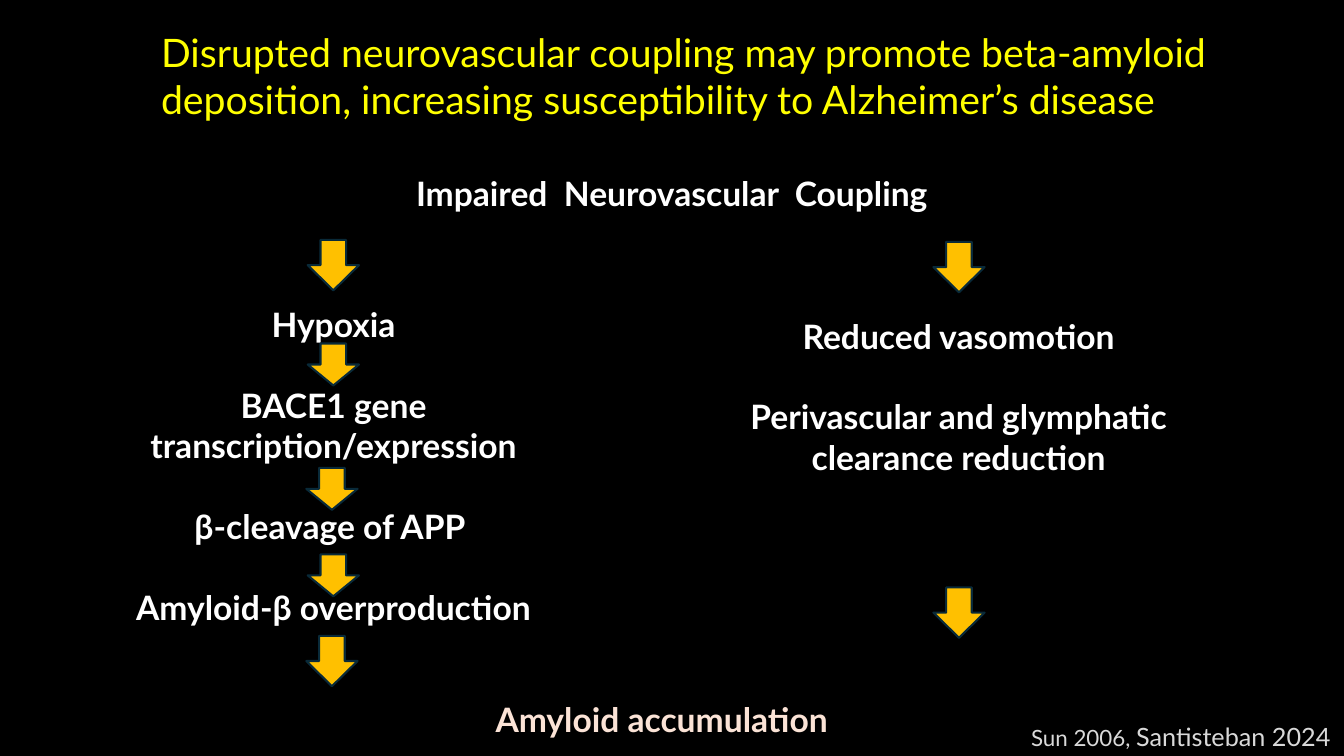
from pptx import Presentation
from pptx.dml.color import RGBColor
from pptx.enum.shapes import MSO_SHAPE
from pptx.enum.text import MSO_AUTO_SIZE, PP_ALIGN
from pptx.util import Pt

COLORS = {
    "background": "000000",
    "title": "FFFF00",
    "step": "FFFFFF",
    "outcome": "FBE3D6",
    "citation": "D9D9D9",
    "arrow": "FFC000",
    "arrow edge": "092A39",
}
FONT = "Lato"
STEP_SIZE = 24
STEP_GAP = 28.8

TITLE = [[("Disrupted neurovascular coupling may promote beta-amyloid deposition, "
           "increasing susceptibility to Alzheimer’s disease", 28)]]
CAUSE = ["Impaired  Neurovascular  Coupling"]
PRODUCTION = ["Hypoxia", "BACE1 gene transcription/expression",
              "β-cleavage of APP ", "Amyloid-β overproduction"]
CLEARANCE = ["Reduced vasomotion", "Perivascular and glymphatic clearance reduction"]
OUTCOME = ["Amyloid accumulation"]
CITATION = [[("Sun 2006, ", 16), ("Santisteban 2024", 18)]]

PLAIN_TEXTS = [
    (TITLE, "title", (108, 16.4, 889, 75)),
    (CITATION, "citation", (729.4, 512, 263, 48)),
]
STEP_TEXTS = [
    (PRODUCTION, "step", (82, 213.8, 312.5, 240)),
    (CLEARANCE, "step", (528.5, 221.8, 312.5, 152.6)),
    (CAUSE, "step", (230.4, 120.2, 499, 36)),
    (OUTCOME, "outcome", (129.6, 495.4, 686, 65.5)),
]

ARROW_WIDTH = 36.6
LONG, SHORT = 36, 30
ARROWS = [
    (219.8, 171.4, LONG),
    (219.8, 245.4, SHORT),
    (218.8, 334.2, SHORT),
    (219.8, 396, SHORT),
    (218.8, 454.2, LONG),
    (666.7, 172.8, LONG),
    (666.7, 419.6, LONG),
]


def rgb(role):
    """Return the colour of a role."""
    return RGBColor.from_string(COLORS[role])


def add_text(slide, paragraphs, role, place, bold=False, align=PP_ALIGN.LEFT):
    """Add a wrapped text box of paragraphs made of (text, size) runs."""
    frame = slide.shapes.add_textbox(*map(Pt, place)).text_frame
    frame.word_wrap = True
    frame.auto_size = MSO_AUTO_SIZE.SHAPE_TO_FIT_TEXT
    for index, runs in enumerate(paragraphs):
        paragraph = frame.add_paragraph() if index else frame.paragraphs[0]
        paragraph.alignment = align
        if index:
            paragraph.space_before = Pt(STEP_GAP)
        for text, size in runs:
            run = paragraph.add_run()
            run.text = text
            run.font.name = FONT
            run.font.size = Pt(size)
            run.font.bold = bold
            run.font.color.rgb = rgb(role)


def add_arrow(slide, left, top, height):
    """Add a block arrow pointing down."""
    arrow = slide.shapes.add_shape(
        MSO_SHAPE.DOWN_ARROW, Pt(left), Pt(top), Pt(ARROW_WIDTH), Pt(height))
    arrow.shadow.inherit = False
    arrow.fill.solid()
    arrow.fill.fore_color.rgb = rgb("arrow")
    arrow.line.color.rgb = rgb("arrow edge")
    arrow.line.width = Pt(1.5)


def main():
    """Build the slide and save it."""
    deck = Presentation()
    deck.slide_width, deck.slide_height = Pt(960), Pt(540)
    slide = deck.slides.add_slide(deck.slide_layouts[6])
    slide.background.fill.solid()
    slide.background.fill.fore_color.rgb = rgb("background")
    for paragraphs, role, place in PLAIN_TEXTS:
        add_text(slide, paragraphs, role, place)
    for steps, role, place in STEP_TEXTS:
        paragraphs = [[(step, STEP_SIZE)] for step in steps]
        add_text(slide, paragraphs, role, place, True, PP_ALIGN.CENTER)
    for left, top, height in ARROWS:
        add_arrow(slide, left, top, height)
    deck.save("out.pptx")


if __name__ == "__main__":
    main()
